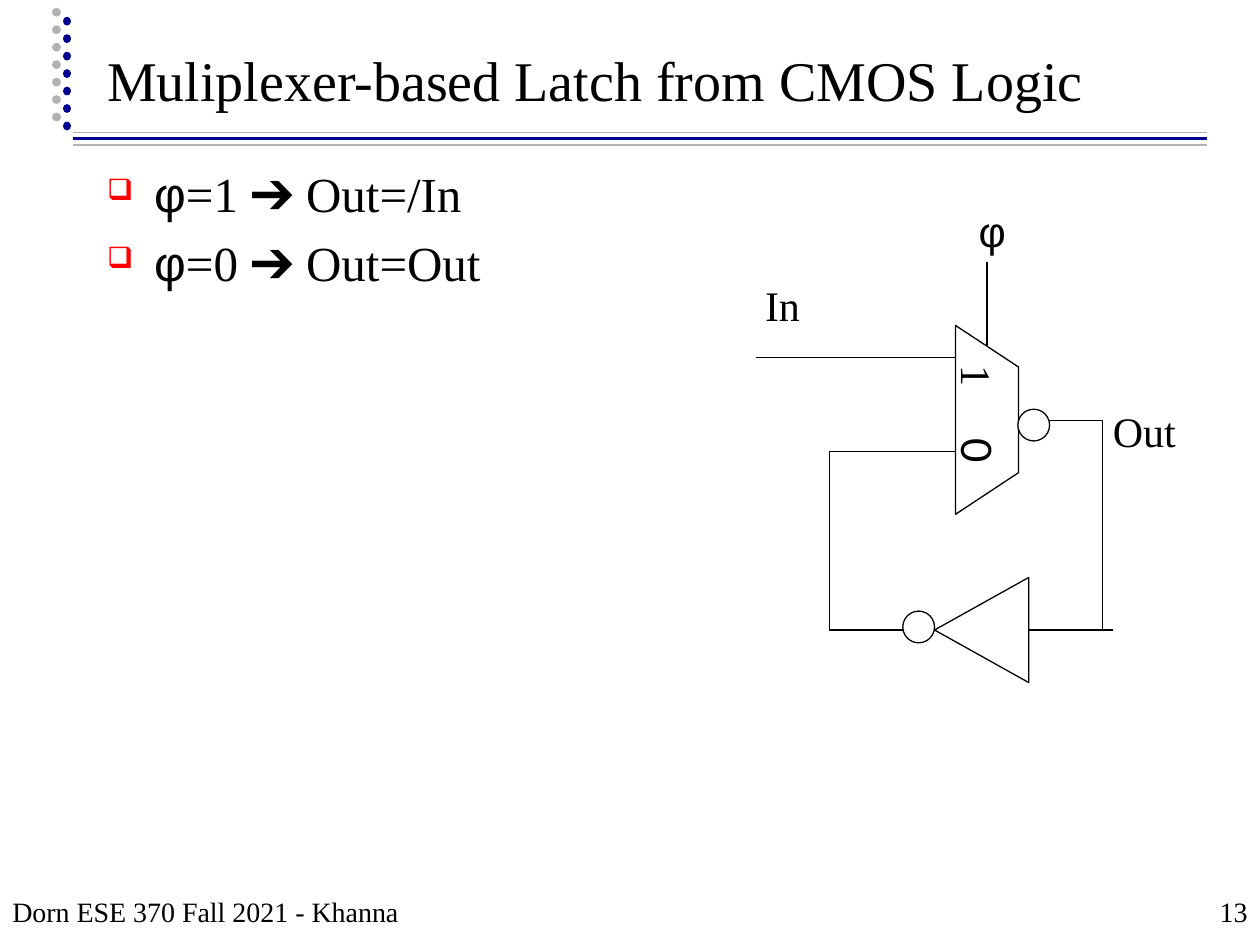
from lxml import etree
from pptx import Presentation
from pptx.dml.color import RGBColor
from pptx.enum.dml import MSO_LINE
from pptx.enum.shapes import MSO_CONNECTOR, MSO_SHAPE
from pptx.enum.text import MSO_ANCHOR, PP_ALIGN
from pptx.oxml.ns import qn
from pptx.util import Cm, Pt

SERIF = "Times New Roman"

prs = Presentation()
prs.slide_width, prs.slide_height = Cm(25.4), Cm(19.05)
s = prs.slides.add_slide(prs.slide_layouts[6])


def color(value):
    return RGBColor.from_string(value)


def write(tf, *runs, size=24, align=PP_ALIGN.LEFT, anchor=MSO_ANCHOR.TOP, wrap=True, new=False):
    tf.word_wrap = wrap
    tf.vertical_anchor = anchor
    p = tf.add_paragraph() if new else tf.paragraphs[0]
    p.alignment = align
    for text, font in runs:
        r = p.add_run()
        r.text = text
        r.font.name = font
        r.font.size = Pt(size)
        r.font.color.rgb = color("000000")
    return p


lines = [
    (1.47, 2.79, 24.33, 2.79, "000090", 2),
    (1.47, 2.92, 24.33, 2.92, "B2B2B2", 1),
    (1.47, 2.67, 24.33, 2.67, "B2B2B2", 1),
    (1.14, 2.36, 1.14, 0.03, "B2B2B2", 5),
    (1.35, 2.54, 1.35, 0.2, "000090", 5),
]
wires = [
    (18.84, 12.7, 16.72, 12.7),
    (16.72, 12.7, 16.72, 9.1),
    (16.72, 9.1, 19.48, 9.1),
    (20.52, 8.47, 22.23, 8.47),
    (22.23, 8.47, 22.23, 12.7),
    (22.44, 12.7, 20.75, 12.7),
    (19.26, 7.2, 15.24, 7.2),
    (19.9, 6.99, 19.9, 5.29),
]
for x1, y1, x2, y2, c, width in lines + [w + ("000000", 0.75) for w in wires]:
    cx = s.shapes.add_connector(MSO_CONNECTOR.STRAIGHT, Cm(x1), Cm(y1), Cm(x2), Cm(y2))
    cx.line.color.rgb = color(c)
    cx.line.width = Pt(width)
    if width == 5:
        cx.line.dash_style = MSO_LINE.ROUND_DOT
        cx.line._ln.set("cap", "rnd")
    etree.SubElement(cx._element.spPr, qn("a:effectLst"))

gates = [
    (MSO_SHAPE.ISOSCELES_TRIANGLE, 18.73, 11.75, 2.12, 1.9, 270),
    (MSO_SHAPE.TRAPEZOID, 17.99, 7.83, 3.81, 1.27, 90),
    (MSO_SHAPE.OVAL, 18.2, 12.32, 0.64, 0.64, 0),
    (MSO_SHAPE.OVAL, 20.52, 8.25, 0.64, 0.64, 0),
]
for kind, x, y, w, h, angle in gates:
    sp = s.shapes.add_shape(kind, Cm(x), Cm(y), Cm(w), Cm(h))
    sp.rotation = angle
    sp.shadow.inherit = False
    sp.fill.solid()
    sp.fill.fore_color.rgb = color("FFFFFF")
    sp.line.color.rgb = color("000000")
    sp.line.width = Pt(0.75)
    if kind == MSO_SHAPE.TRAPEZOID:
        sp.adjustments[0] = 0.66
        p = write(sp.text_frame, ("1\t", SERIF), ("0", "Lato"))
        tabs = etree.SubElement(p._p.get_or_add_pPr(), qn("a:tabLst"))
        etree.SubElement(tabs, qn("a:tab"), pos=str(Cm(1.47)), algn="l")

bottom = {"anchor": MSO_ANCHOR.BOTTOM}
center = {"align": PP_ALIGN.CENTER}
labels = [
    ("Muliplexer-based Latch from CMOS Logic", SERIF, 1.91, 0.28, 21.64, 2.11, {"size": 32, **bottom}),
    ("In", SERIF, 14.82, 5.5, 1.91, 1.27, center),
    ("Out", SERIF, 22.13, 8.04, 1.88, 1.27, {"wrap": False, **center}),
    ("φ", "Arial", 19.48, 4.02, 0.97, 1.27, {"wrap": False, **center}),
    ("Dorn ESE 370 Fall 2021 - Khanna", SERIF, 0, 17.57, 13.76, 1.27, {"size": 16, **bottom}),
    ("13", SERIF, 20.11, 17.57, 5.29, 1.27, {"size": 16, "align": PP_ALIGN.RIGHT, **bottom}),
]
for text, font, x, y, w, h, fmt in labels:
    tb = s.shapes.add_textbox(Cm(x), Cm(y), Cm(w), Cm(h))
    write(tb.text_frame, (text, font), **fmt)

tf = s.shapes.add_textbox(Cm(1.91), Cm(3.18), Cm(21.59), Cm(13.97)).text_frame
for i, text in enumerate(["=1 ➔ Out=/In", "=0 ➔ Out=Out"]):
    p = write(tf, ("φ", "Arial"), (text, SERIF), size=28, new=i > 0)
    p.space_before = Pt(5.6)
    pPr = p._p.get_or_add_pPr()
    pPr.set("marL", str(Cm(0.95)))
    pPr.set("indent", str(Cm(-0.95)))
    etree.SubElement(etree.SubElement(pPr, qn("a:buClr")), qn("a:srgbClr"), val="FF0000")
    etree.SubElement(pPr, qn("a:buSzPct"), val="60000")
    etree.SubElement(pPr, qn("a:buChar"), char="❑")

prs.save("out.pptx")
